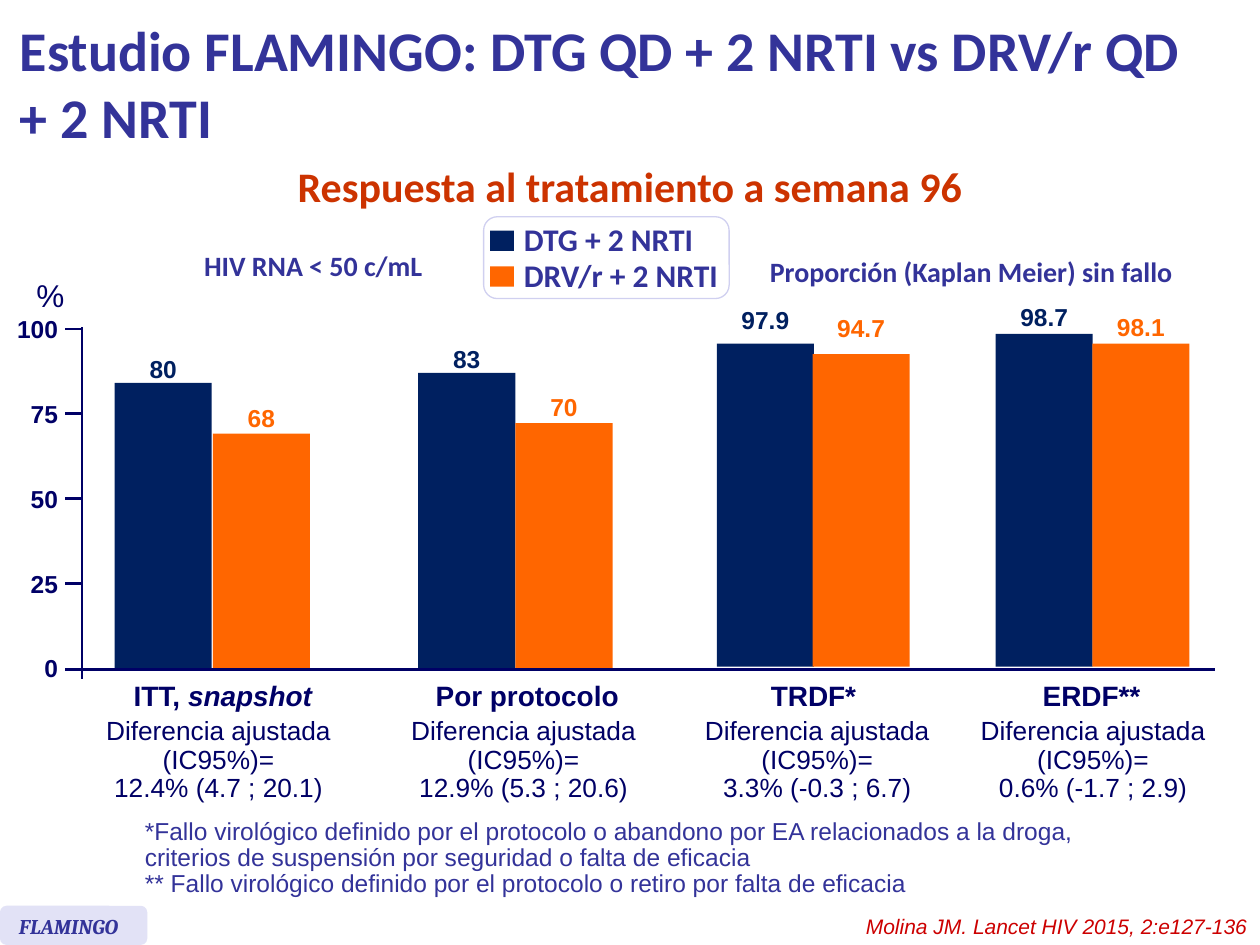
from pptx import Presentation
from pptx.dml.color import RGBColor
from pptx.enum.shapes import MSO_CONNECTOR, MSO_SHAPE
from pptx.enum.text import MSO_ANCHOR, PP_ALIGN
from pptx.oxml.ns import qn
from pptx.util import Cm, Pt
from lxml.etree import SubElement

NAVY = RGBColor(0x00, 0x20, 0x60)
ORANGE = RGBColor(0xFF, 0x66, 0x00)
INDIGO = RGBColor(0x33, 0x33, 0x99)
AXIS = RGBColor(0x00, 0x00, 0x66)
RUST = RGBColor(0xCC, 0x33, 0x00)
RED = RGBColor(0xCC, 0x00, 0x00)
LILAC = RGBColor(0xE2, 0xE2, 0xF6)
BORDER = RGBColor(0xD0, 0xD0, 0xF0)
WHITE = RGBColor(0xFF, 0xFF, 0xFF)

LEFT, CENTER, RIGHT = PP_ALIGN.LEFT, PP_ALIGN.CENTER, PP_ALIGN.RIGHT

prs = Presentation()
prs.slide_width, prs.slide_height = Cm(25.4), Cm(19.05)
s = prs.slides.add_slide(prs.slide_layouts[6])


def add_text(x, y, w, h, lines, size, color, font="Arial", bold=False, italic=False,
             align=LEFT, anchor=MSO_ANCHOR.TOP, wrap=True, inset=None, spacing=None):
    tf = s.shapes.add_textbox(Cm(x), Cm(y), Cm(w), Cm(h)).text_frame
    tf.word_wrap = wrap
    tf.vertical_anchor = anchor
    if inset is not None:
        tf.margin_left = tf.margin_right = tf.margin_top = tf.margin_bottom = Cm(inset)
    for i, line in enumerate(lines):
        p = tf.paragraphs[0] if i == 0 else tf.add_paragraph()
        p.text = line
        p.alignment = align
        p.line_spacing = spacing
        p.font.size, p.font.name = Pt(size), font
        p.font.bold, p.font.italic = bold, italic
        p.font.color.rgb = color
    return tf


def add_box(x, y, w, h, fill, kind=MSO_SHAPE.RECTANGLE):
    sp = s.shapes.add_shape(kind, Cm(x), Cm(y), Cm(w), Cm(h))
    sp.shadow.inherit = False
    sp.fill.solid()
    sp.fill.fore_color.rgb = fill
    sp.line.fill.background()
    return sp


add_text(0.15, 0.13, 24.26, 3.07,
         ["Estudio FLAMINGO: DTG QD + 2 NRTI vs DRV/r QD\v+ 2 NRTI"],
         32, INDIGO, "Calibri", bold=True, anchor=MSO_ANCHOR.MIDDLE)
add_text(5.64, 3.12, 14.12, 1.27, ["Respuesta al tratamiento a semana 96"],
         24, RUST, "Calibri", bold=True, align=CENTER, wrap=False)
add_text(2.77, 5, 7.09, 0.81, ["HIV RNA < 50 c/mL"], 16, INDIGO, "Calibri",
         bold=True, align=CENTER, anchor=MSO_ANCHOR.MIDDLE, spacing=0.8)
add_text(15.21, 5, 8.74, 0.94, ["Proporción (Kaplan Meier) sin fallo"],
         16, INDIGO, "Calibri", bold=True, align=CENTER, wrap=False)

legend = add_box(9.75, 4.37, 4.95, 1.65, WHITE, MSO_SHAPE.ROUNDED_RECTANGLE)
legend.line.color.rgb = BORDER
legend.line.width = Pt(0.75)
for y, w, color, name in [(4.32, 3.96, NAVY, "DTG + 2 NRTI"),
                          (5.04, 4.47, ORANGE, "DRV/r + 2 NRTI")]:
    add_box(9.88, y + 0.33, 0.48, 0.41, color)
    add_text(10.31, y, w, 1.02, [name], 18, INDIGO, "Calibri", bold=True, wrap=False)

BAR_W = 1.96
bars = [
    (2.31, 7.72, 13.51, 6.88, "80", NAVY),
    (4.29, 8.74, 13.51, 7.87, "68", ORANGE),
    (8.43, 7.52, 13.51, 6.68, "83", NAVY),
    (10.39, 8.53, 13.51, 7.65, "70", ORANGE),
    (14.45, 6.93, 13.44, 5.89, "97.9", NAVY),
    (16.38, 7.14, 13.44, 6.07, "94.7", ORANGE),
    (20.07, 6.73, 13.44, 5.84, "98.7", NAVY),
    (22.02, 6.93, 13.44, 6.05, "98.1", ORANGE),
]
for x, top, bottom, label_y, value, color in bars:
    add_box(x, top, BAR_W, bottom - top, color)
    add_text(x + 0.23, label_y, 1.5, 1.12, [value], 14, color, bold=True,
             align=CENTER, inset=0.25)

axes = [(1.65, 6.6, 1.65, 13.69), (1.32, 13.49, 24.49, 13.49)]
for i in range(5):
    y = 13.47 - 1.71 * i
    add_text(0.1, y - 0.3, 1.07, 0.6, [str(25 * i)], 14, AXIS, bold=True,
             align=RIGHT, anchor=MSO_ANCHOR.MIDDLE, inset=0)
    if i:
        axes.append((1.32, y, 1.65, y))
for x1, y1, x2, y2 in axes:
    line = s.shapes.add_connector(MSO_CONNECTOR.STRAIGHT, Cm(x1), Cm(y1), Cm(x2), Cm(y2))
    line.line.color.rgb = AXIS
    line.line.width = Pt(1.5)
    SubElement(line._element.spPr, qn("a:effectLst"))
add_text(0.46, 5.44, 1.09, 1.02, ["%"], 18, AXIS, align=RIGHT)

groups = [
    (2.41, 4.17, 1.85, "ITT, ", "12.4% (4.7 ; 20.1)"),
    (8.51, 4.24, 8, "Por protocolo", "12.9% (5.3 ; 20.6)"),
    (15.27, 2.26, 13.92, "TRDF*", "3.3% (-0.3 ; 6.7)"),
    (20.75, 2.51, 19.48, "ERDF**", "0.6% (-1.7 ; 2.9)"),
]
for x, w, diff_x, name, diff in groups:
    tf = add_text(x, 13.56, w, 0.94, [name], 16, AXIS, bold=True, align=CENTER, wrap=False)
    if name == "ITT, ":
        r = tf.paragraphs[0].add_run()
        r.text = "snapshot"
        r.font.italic = True
    add_text(diff_x, 14.35, 5.11, 2.01, ["Diferencia ajustada", "(IC95%)=", diff],
             15, AXIS, align=CENTER, wrap=False, spacing=0.9)

add_text(2.67, 16.38, 19.51, 1.85,
         ["*Fallo virológico definido por el protocolo o abandono por EA relacionados a la "
          "droga, criterios de suspensión por seguridad o falta de eficacia",
          "** Fallo virológico definido por el protocolo o retiro por falta de eficacia"],
         14, INDIGO, spacing=Pt(15))
add_box(0, 18.26, 2.97, 0.79, LILAC, MSO_SHAPE.ROUNDED_RECTANGLE)
add_text(0.13, 18.29, 2.84, 0.76, ["FLAMINGO"], 12, INDIGO, "Cambria", bold=True, italic=True)
add_text(17.2, 18.29, 8.2, 0.76, ["Molina JM. Lancet HIV 2015, 2:e127-136"],
         12, RED, italic=True, align=RIGHT)

prs.save("out.pptx")
